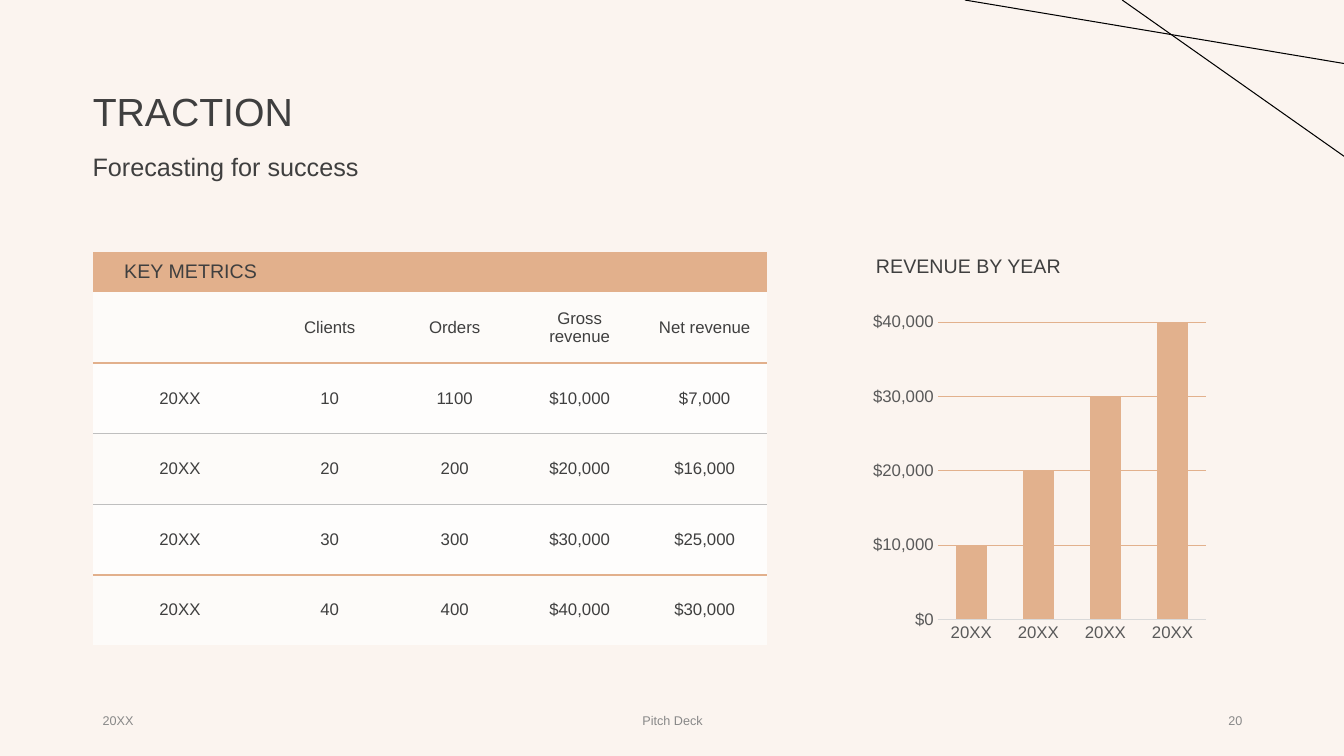
from lxml import etree
from pptx import Presentation
from pptx import util as u
from pptx.chart.data import CategoryChartData
from pptx.dml.color import RGBColor
from pptx.enum import chart as charts, shapes, text
from pptx.oxml.ns import qn

TITLE = "TRACTION"
SUBTITLE = "Forecasting for success"
TABLE_TITLE = "KEY METRICS"
METRICS = [
    ("", "Clients", "Orders", "Gross revenue", "Net revenue"),
    ("20XX", "10", "1100", "$10,000", "$7,000"),
    ("20XX", "20", "200", "$20,000", "$16,000"),
    ("20XX", "30", "300", "$30,000", "$25,000"),
    ("20XX", "40", "400", "$40,000", "$30,000"),
]
CHART_TITLE = "REVENUE BY YEAR"
YEARS = ["20XX"] * 4
REVENUE = [10000, 20000, 30000, 40000]
LEFT, CENTER, RIGHT = text.PP_ALIGN.LEFT, text.PP_ALIGN.CENTER, text.PP_ALIGN.RIGHT
FOOTERS = [("20XX", 0.92, 3, LEFT), ("Pitch Deck", 4.42, 4.5, CENTER), ("20", 9.42, 3, RIGHT)]
CORNER_LINES = [((11.13, 0), (13.33, 1.55)), ((9.57, 0), (13.33, 0.63))]

WIDTH, HEIGHT = 13.33, 7.5
MARGIN, CONTENT_TOP = 0.92, 2.5
CHART_LEFT, CHART_WIDTH = 8.59, 3.44
COLUMN_WIDTHS = [1.73] + [1.24] * 4
ROW_HEIGHTS = [0.38] + [0.7] * len(METRICS)

FONT = "Arial"
CREAM = RGBColor(0xFB, 0xF4, 0xEF)
INK = RGBColor(0x3F, 0x3F, 0x3F)
PEACH = RGBColor(0xE2, 0xB0, 0x8C)
CHART_PEACH = RGBColor(0xE2, 0xB1, 0x8D)
BAND_DARK = RGBColor(0xFD, 0xFB, 0xF9)
BAND_LIGHT = RGBColor(0xFE, 0xFD, 0xFC)
RULE_GREY = RGBColor(0xBF, 0xBF, 0xBF)
AXIS_TEXT = RGBColor(0x59, 0x59, 0x59)
AXIS_LINE = RGBColor(0xD9, 0xD9, 0xD9)
FOOTER_GREY = RGBColor(0x88, 0x88, 0x88)
BLACK = RGBColor(0, 0, 0)
ROW_RULES = {1: (PEACH, 1), 2: (RULE_GREY, 0.75), 3: (RULE_GREY, 0.75), 4: (PEACH, 1.5)}


def write(frame, content, size=12, color=INK, align=LEFT, spacing=None):
    paragraph = frame.paragraphs[0]
    paragraph.alignment = align
    paragraph.line_spacing = spacing
    run = paragraph.add_run()
    run.text = content
    style_font(run.font, size, color)


def style_font(font, size, color):
    font.name, font.size, font.bold = FONT, u.Pt(size), False
    font.color.rgb = color


def add_text(slide, content, left, top, width, height, anchor=text.MSO_ANCHOR.TOP, **style):
    box = slide.shapes.add_textbox(*map(u.Inches, (left, top, width, height)))
    box.text_frame.word_wrap = True
    box.text_frame.vertical_anchor = anchor
    write(box.text_frame, content, **style)


def set_borders(cell, top, bottom):
    properties = cell._tc.get_or_add_tcPr()
    sides = [("a:lnL", None), ("a:lnR", None), ("a:lnT", top), ("a:lnB", bottom)]
    for position, (tag, rule) in enumerate(sides):
        line = etree.Element(qn(tag))
        if rule:
            color, width = rule
            line.set("w", str(u.Pt(width)))
            fill = etree.SubElement(line, qn("a:solidFill"))
            etree.SubElement(fill, qn("a:srgbClr"), val=str(color))
        else:
            etree.SubElement(line, qn("a:noFill"))
        properties.insert(position, line)


def add_metrics(slide):
    rows = [(TABLE_TITLE, "", "", "", "")] + METRICS
    table = slide.shapes.add_table(
        len(rows), len(COLUMN_WIDTHS), u.Inches(MARGIN), u.Inches(CONTENT_TOP),
        u.Inches(sum(COLUMN_WIDTHS)), u.Inches(sum(ROW_HEIGHTS))).table
    for column, width in zip(table.columns, COLUMN_WIDTHS):
        column.width = u.Inches(width)
    for index, values in enumerate(rows):
        table.rows[index].height = u.Inches(ROW_HEIGHTS[index])
        for column, value in enumerate(values):
            cell = table.cell(index, column)
            cell.vertical_anchor = text.MSO_ANCHOR.MIDDLE
            cell.fill.solid()
            cell.fill.fore_color.rgb = (
                PEACH if index == 0 else BAND_DARK if index % 2 else BAND_LIGHT)
            set_borders(cell, ROW_RULES.get(index - 1), ROW_RULES.get(index))
            if value:
                write(cell.text_frame, value, size=12 if index else 14,
                      align=CENTER if index else RIGHT)


def add_revenue(slide):
    data = CategoryChartData()
    data.categories = YEARS
    data.add_series("Series 1", REVENUE)
    chart = slide.shapes.add_chart(
        charts.XL_CHART_TYPE.COLUMN_CLUSTERED, u.Inches(CHART_LEFT), u.Inches(3.04),
        u.Inches(CHART_WIDTH), u.Inches(3.39), data).chart
    chart.has_legend = chart.has_title = False
    style_font(chart.font, 10, BLACK)
    plot = chart.plots[0]
    plot.vary_by_categories, plot.gap_width, plot.overlap = False, 118, -3
    bars = plot.series[0].format.fill
    bars.solid()
    bars.fore_color.rgb = CHART_PEACH
    years, dollars = chart.category_axis, chart.value_axis
    for axis in (years, dollars):
        axis.major_tick_mark = axis.minor_tick_mark = charts.XL_TICK_MARK.NONE
        style_font(axis.tick_labels.font, 12, AXIS_TEXT)
    dollars.minimum_scale, dollars.maximum_scale, dollars.major_unit = 0, 40000, 10000
    dollars.tick_labels.number_format = "[$$-409]#,##0"
    dollars.tick_labels.number_format_is_linked = False
    dollars.format.line.fill.background()
    for part, color in ((years, AXIS_LINE), (dollars.major_gridlines, CHART_PEACH)):
        part.format.line.color.rgb = color
        part.format.line.width = u.Pt(0.75)


def main():
    presentation = Presentation()
    presentation.slide_width, presentation.slide_height = u.Inches(WIDTH), u.Inches(HEIGHT)
    slide = presentation.slides.add_slide(presentation.slide_layouts[5])
    slide.background.fill.solid()
    slide.background.fill.fore_color.rgb = CREAM

    title = slide.shapes.title
    title.left, title.top, title.width, title.height = map(u.Inches, (MARGIN, 0.4, 11.5, 1.45))
    title.text_frame.margin_left = 0
    title.text_frame.vertical_anchor = text.MSO_ANCHOR.MIDDLE
    write(title.text_frame, TITLE, size=28, spacing=0.9)

    add_text(slide, SUBTITLE, MARGIN - 0.1, 1.49, 7.4, 0.54, size=18, spacing=0.9)
    add_metrics(slide)
    add_text(slide, CHART_TITLE, CHART_LEFT, CONTENT_TOP, CHART_WIDTH, 0.34,
             size=14, spacing=0.9)
    add_revenue(slide)
    for content, left, width, align in FOOTERS:
        add_text(slide, content, left, 6.95, width, 0.4, anchor=text.MSO_ANCHOR.MIDDLE,
                 size=9, color=FOOTER_GREY, align=align)
    for start, end in CORNER_LINES:
        line = slide.shapes.add_connector(
            shapes.MSO_CONNECTOR.STRAIGHT, *map(u.Inches, start + end))
        line.line.color.rgb = BLACK
        line.line.width = u.Pt(0.75)
        etree.SubElement(line._element.spPr, qn("a:effectLst"))
    presentation.save("out.pptx")


if __name__ == "__main__":
    main()
